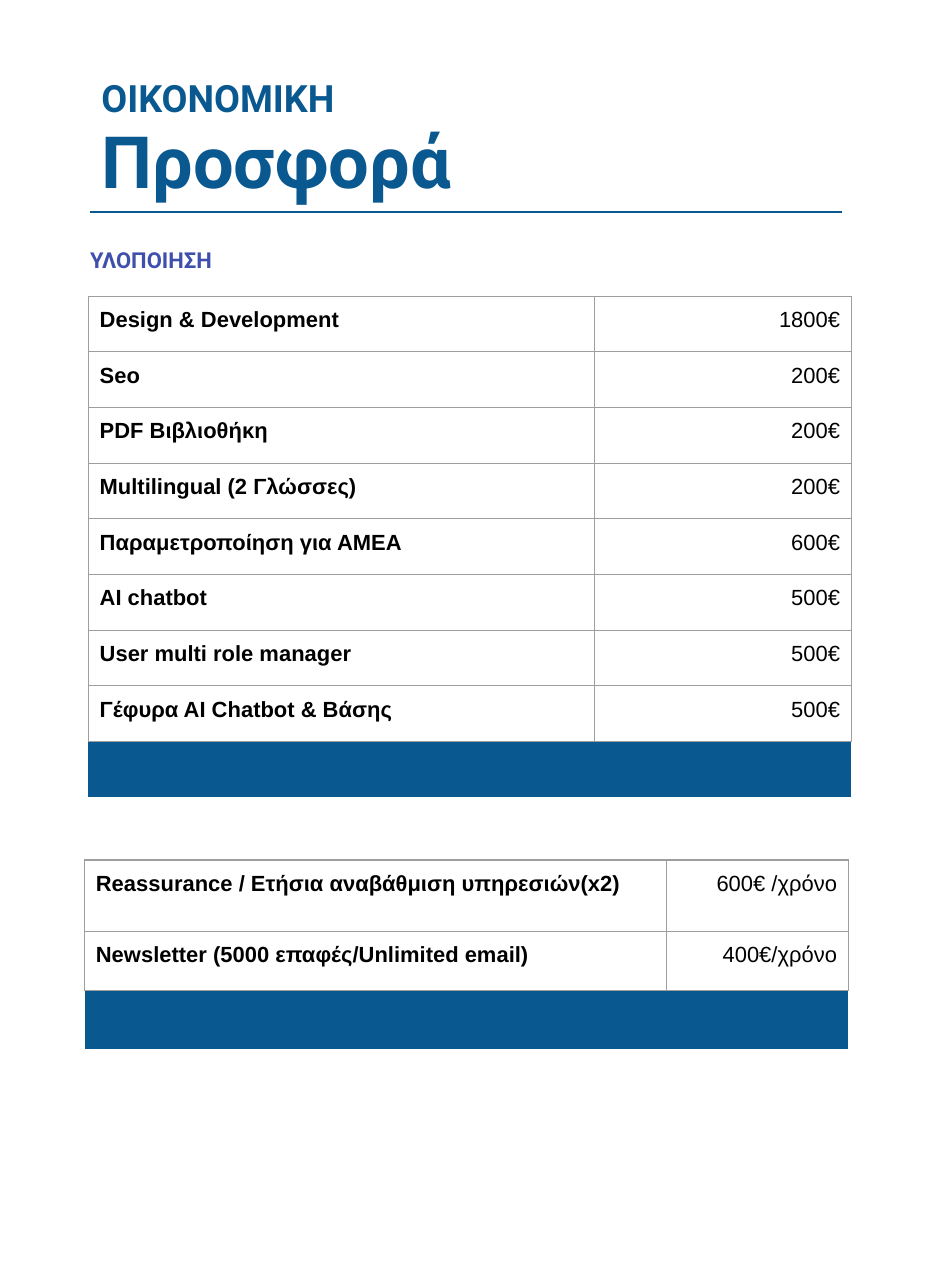
from lxml import etree
from pptx import Presentation
from pptx.dml.color import RGBColor
from pptx.enum import shapes, text
from pptx.oxml import ns
from pptx.util import Pt

BLUE, VIOLET, GREY, BLACK = "095890", "3F50AC", "9E9E9E", "000000"
INSET = 7.2

HEADINGS = [
    ("Προσφορά", 46, BLUE, (57.6, 59, 415.4, 88.6)),
    ("OIKONOMIKH", 24, BLUE, (57.6, 36, 480, 62)),
    ("ΥΛΟΠΟΙΗΣΗ", 14, VIOLET, (50.4, 147.6, 494, 41.8)),
]
RULE = (57.6, 135.4, 537.1, 135.4)
SERVICES = [
    ("Design & Development", "1800€"),
    ("Seo", "200€"),
    ("PDF Βιβλιοθήκη", "200€"),
    ("Multilingual (2 Γλώσσες)", "200€"),
    ("Παραμετροποίηση για ΑΜΕΑ", "600€"),
    ("AI chatbot", "500€"),
    ("User multi role manager", "500€"),
    ("Γέφυρα ΑΙ Chatbot & Βάσης", "500€"),
]
YEARLY = [
    ("Reassurance / Ετήσια αναβάθμιση υπηρεσιών(x2)", "600€ /χρόνο"),
    ("Newsletter (5000 επαφές/Unlimited email)", "400€/χρόνο"),
]
TABLES = [
    (SERVICES, (56.4, 189.1), (323, 164), [35.55] * 9),
    (YEARLY, (54, 549), (371.5, 116), [45.8, 37.8, 37.4]),
]


def rgb(value):
    return RGBColor.from_string(value)


def style(p, size, color, font, bold, align):
    p.font.size, p.font.name, p.font.bold = Pt(size), font, bold
    p.font.color.rgb = rgb(color)
    p.alignment = align


def heading(sp, words, size, color, box):
    sp.left, sp.top, sp.width, sp.height = map(Pt, box)
    tf = sp.text_frame
    tf.word_wrap, tf.auto_size = True, text.MSO_AUTO_SIZE.NONE
    tf.vertical_anchor = text.MSO_ANCHOR.TOP
    tf.margin_left = tf.margin_right = tf.margin_top = tf.margin_bottom = Pt(INSET)
    p = tf.paragraphs[0]
    p.text, p.line_spacing = words, 1.15
    style(p, size, color, "Roboto", True, text.PP_ALIGN.LEFT)


def borders(cell, visible):
    tc_pr = cell._tc.get_or_add_tcPr()
    for i, side in enumerate("LRTB"):
        ln = etree.Element(ns.qn(f"a:ln{side}"), w=str(Pt(0.75)))
        if side in visible:
            fill = etree.SubElement(ln, ns.qn("a:solidFill"))
            etree.SubElement(fill, ns.qn("a:srgbClr"), val=GREY)
        else:
            etree.SubElement(ln, ns.qn("a:noFill"))
        tc_pr.insert(i, ln)


def price_table(s, items, corner, widths, heights):
    frame = s.shapes.add_table(len(heights), 2, *map(Pt, (*corner, sum(widths), sum(heights))))
    table = frame.table
    table.first_row = table.horz_banding = False
    for col, width in zip(table.columns, widths):
        col.width = Pt(width)
    for row, height in zip(table.rows, heights):
        row.height = Pt(height)
    for row, item in zip(table.rows, items):
        for cell, words, bold, align in zip(
            row.cells, item, (True, False), (text.PP_ALIGN.LEFT, text.PP_ALIGN.RIGHT)
        ):
            cell.margin_left = cell.margin_right = Pt(INSET)
            cell.margin_top = cell.margin_bottom = Pt(INSET)
            cell.fill.background()
            p = cell.text_frame.paragraphs[0]
            p.text = words
            style(p, 14, BLACK, "Arial", bold, align)
            borders(cell, "LRTB")
    for cell in table.rows[len(items)].cells:
        cell.fill.solid()
        cell.fill.fore_color.rgb = rgb(BLUE)
        borders(cell, "T")


def main():
    prs = Presentation()
    prs.slide_width, prs.slide_height = Pt(595.44), Pt(822.24)
    s = prs.slides.add_slide(prs.slide_layouts[5])

    heading(s.shapes.title, *HEADINGS[0])
    for item in HEADINGS[1:]:
        heading(s.shapes.add_textbox(0, 0, 0, 0), *item)

    line = s.shapes.add_connector(shapes.MSO_CONNECTOR.STRAIGHT, *map(Pt, RULE))
    line.line.color.rgb = rgb(BLUE)
    line.line.width = Pt(0.75)
    etree.SubElement(line._element.spPr, ns.qn("a:effectLst"))

    for spec_row in TABLES:
        price_table(s, *spec_row)
    prs.save("out.pptx")


if __name__ == "__main__":
    main()
